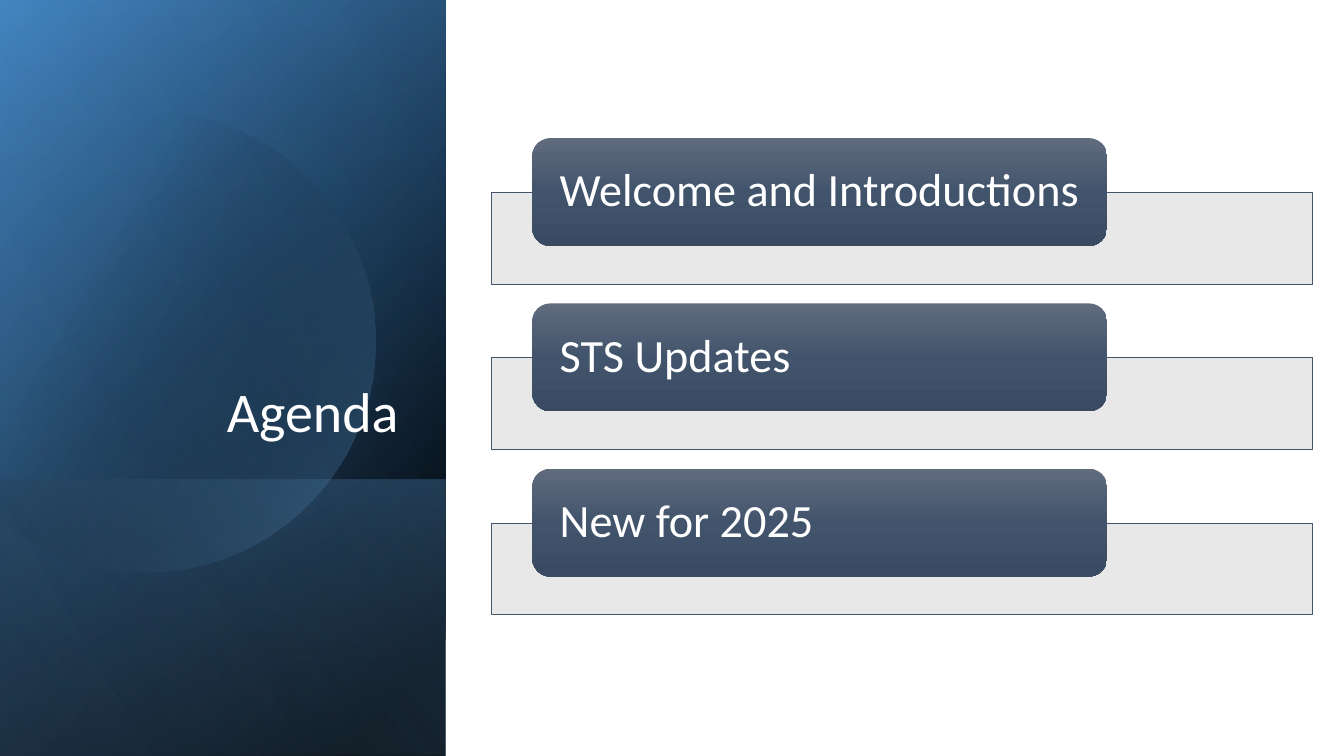
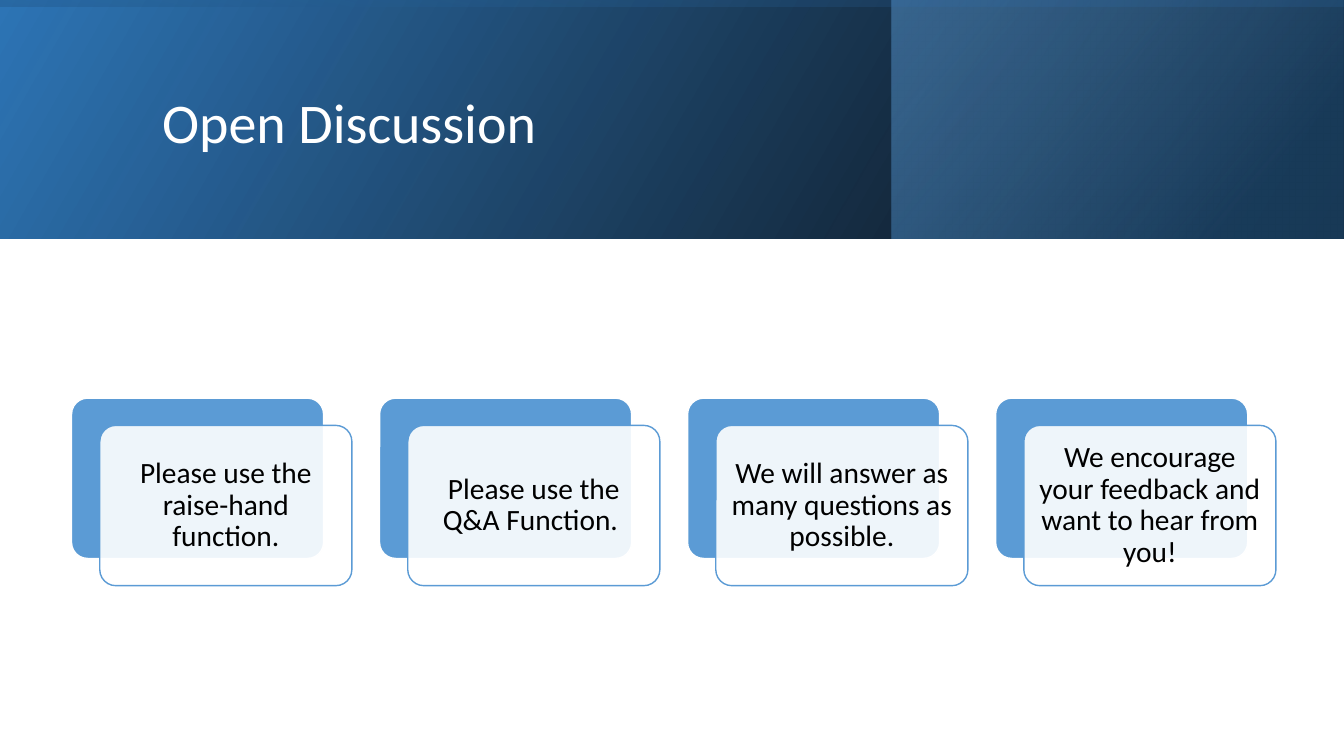
import math

from pptx import Presentation
from pptx.dml.color import RGBColor
from pptx.enum.shapes import MSO_SHAPE
from pptx.enum.text import MSO_ANCHOR, PP_ALIGN
from pptx.oxml.ns import qn
from pptx.oxml.xmlchemy import OxmlElement
from pptx.util import Inches, Pt
from lxml import etree

RECT, ROUND = MSO_SHAPE.RECTANGLE, MSO_SHAPE.ROUNDED_RECTANGLE
LEFT, CENTER, RIGHT = PP_ALIGN.LEFT, PP_ALIGN.CENTER, PP_ALIGN.RIGHT
MIDDLE, BOTTOM = MSO_ANCHOR.MIDDLE, MSO_ANCHOR.BOTTOM

FONT = "Calibri"
WHITE, BLACK = "FFFFFF", "000000"
BLUE, DEEP_BLUE, NAVY, PALE_BLUE = "5B9BD5", "2E75B6", "1F4E79", "9DC3E6"
SLATE, GREY = "44546A", "E7E6E6"
TITLE_SIZE = 40


def paint(shape, stops, angle=0, line=None, line_width=1):
    """Fill with (position, colour, opacity) stops; a single stop is a solid fill."""
    shape.shadow.inherit = False
    shape.fill.background()
    fill = OxmlElement("a:solidFill" if len(stops) == 1 else "a:gradFill")
    holder = fill
    if len(stops) > 1:
        fill.set("rotWithShape", "1")
        stop_list = etree.SubElement(fill, qn("a:gsLst"))
    for position, color, opacity in stops:
        if len(stops) > 1:
            holder = etree.SubElement(stop_list, qn("a:gs"), pos=str(position * 1000))
        tint = etree.SubElement(holder, qn("a:srgbClr"), val=color)
        if opacity < 100:
            etree.SubElement(tint, qn("a:alpha"), val=str(opacity * 1000))
    if len(stops) > 1:
        etree.SubElement(fill, qn("a:lin"), ang=str(angle * 60000), scaled="0")
    properties = shape.element.spPr
    properties.replace(properties.find(qn("a:noFill")), fill)
    if line:
        shape.line.color.rgb = RGBColor.from_string(line)
        shape.line.width = Pt(line_width)
    else:
        shape.line.fill.background()


def write(shape, text, size=TITLE_SIZE, color=WHITE, align=LEFT, anchor=MIDDLE,
          inset_x=0.1, inset_y=0.05):
    frame = shape.text_frame
    frame.word_wrap = True
    frame.vertical_anchor = anchor
    frame.margin_left = frame.margin_right = Inches(inset_x)
    frame.margin_top = frame.margin_bottom = Inches(inset_y)
    paragraph = frame.paragraphs[0]
    paragraph.alignment = align
    paragraph.line_spacing = 0.9
    run = paragraph.add_run()
    run.text = text
    run.font.name = FONT
    run.font.size = Pt(size)
    run.font.color.rgb = RGBColor.from_string(color)


prs = Presentation()
prs.slide_width, prs.slide_height = Inches(13.33), Inches(7.5)
blank = prs.slide_layouts[6]
agenda = prs.slides.add_slide(blank)
discussion = prs.slides.add_slide(blank)

# Layered gradient bands; None marks the place of the agenda circle
bands = [
    (agenda, (-1.54, 1.54, 7.5, 4.42), 90, [(8, BLACK, 100), (100, DEEP_BLUE, 100)], 50),
    (agenda, (-1.54, 1.54, 7.5, 4.42), 90, [(0, BLACK, 0), (99, BLUE, 46)], 30),
    (agenda, (0.84, 3.92, 2.74, 4.42), 90, [(2, BLUE, 29), (100, BLACK, 30)], 130),
    None,
    (agenda, (-1.54, 1.54, 7.5, 4.42), 90, [(0, BLACK, 0), (99, PALE_BLUE, 11)], 120),
    (discussion, (0, 0, 13.33, 2.37), 0, [(0, BLACK, 96), (100, DEEP_BLUE, 100)], 330),
    (discussion, (8.84, 0, 4.48, 2.37), 0, [(19, NAVY, 68), (100, BLUE, 48)], 320),
    (discussion, (5.48, -5.48, 2.37, 13.33), 270, [(23, DEEP_BLUE, 16), (99, BLACK, 45)], 350),
]
for band in bands:
    if band:
        slide, box, rotation, stops, angle = band
        panel = slide.shapes.add_shape(RECT, *map(Inches, box))
        panel.rotation = rotation
        panel.element.spPr.xfrm.set("flipH", "1")
        paint(panel, stops, angle)
        continue
    # Circle cut off at the left edge of the slide
    center_x, center_y, radius, steps = 1.43, 3.39, 2.29, 120
    limit = math.acos(-center_x / radius)
    turns = [limit * (2 * step / steps - 1) for step in range(steps + 1)]
    arc = [(Inches(center_x + radius * math.cos(turn)),
            Inches(center_y + radius * math.sin(turn))) for turn in turns]
    outline = agenda.shapes.build_freeform(*arc[0])
    outline.add_line_segments(arc[1:], close=True)
    paint(outline.convert_to_shape(), [(29, BLACK, 0), (100, BLUE, 43)], 30)

# Titles
for slide, text, box, align, anchor in [
    (agenda, "Agenda", (0.64, 1.84, 3.41, 2.62), RIGHT, BOTTOM),
    (discussion, "Open Discussion", (1.51, 0.38, 10.63, 1.72), LEFT, MIDDLE),
]:
    write(slide.shapes.add_textbox(*map(Inches, box)), text, align=align, anchor=anchor)

# Agenda topics
topics = ["Welcome and Introductions", "STS Updates", "New for 2025"]
for row, topic in enumerate(topics):
    top = 1.37 + row * 1.64
    bar = agenda.shapes.add_shape(
        RECT, Inches(4.87), Inches(top + 0.54), Inches(8.15), Inches(0.91))
    paint(bar, [(0, GREY, 90)], line=SLATE, line_width=0.5)
    label = agenda.shapes.add_shape(
        ROUND, Inches(5.28), Inches(top), Inches(5.7), Inches(1.07))
    paint(label, [(0, "606B7D", 100), (50, "42546C", 100), (100, "394A62", 100)], 90)
    write(label, topic, size=33, inset_x=0.22, inset_y=0)

# Discussion cards
requests = [
    "Please use the raise-hand function.",
    "Please use the Q&A Function. ",
    "We will answer as many questions as possible.",
    "We encourage your feedback and want to hear from you!",
]
for column, request in enumerate(requests):
    left = 0.71 + column * 3.055
    for offset_x, top, stop, line in [
        (0, 3.95, (0, BLUE, 100), WHITE),
        (0.28, 4.22, (0, WHITE, 90), BLUE),
    ]:
        card = discussion.shapes.add_shape(
            ROUND, Inches(left + offset_x), Inches(top), Inches(2.5), Inches(1.59))
        card.adjustments[0] = 0.1
        paint(card, [stop], line=line)
    write(card, request, size=21, color=BLACK, align=CENTER, inset_x=0.09, inset_y=0.09)

prs.save("out.pptx")
